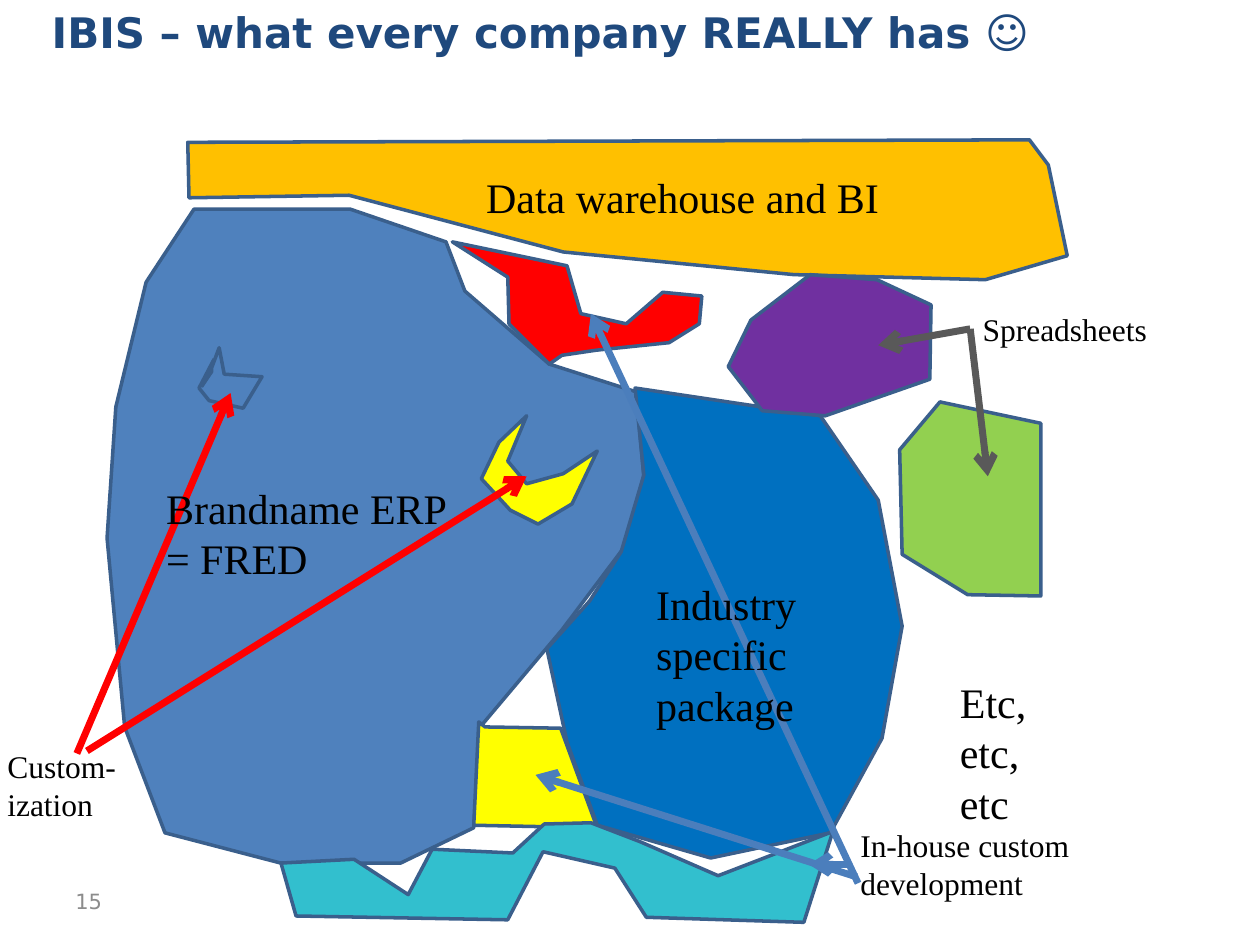
from pptx import Presentation
from pptx.dml.color import RGBColor
from pptx.enum.shapes import MSO_CONNECTOR
from pptx.enum.text import MSO_ANCHOR, PP_ALIGN
from pptx.oxml.ns import qn
from pptx.util import Inches, Pt
from lxml import etree

STRAIGHT = MSO_CONNECTOR.STRAIGHT
TOP, MIDDLE, LEFT = MSO_ANCHOR.TOP, MSO_ANCHOR.MIDDLE, PP_ALIGN.LEFT

OUTLINE = RGBColor(0x3A, 0x5F, 0x8C)
NAVY = RGBColor(0x1F, 0x49, 0x7D)
STEEL = RGBColor(0x4F, 0x81, 0xBD)
BLUE = RGBColor(0x00, 0x70, 0xC0)
YELLOW = RGBColor(0xFF, 0xFF, 0x00)
ORANGE = RGBColor(0xFF, 0xC0, 0x00)
RED = RGBColor(0xFF, 0x00, 0x00)
PURPLE = RGBColor(0x70, 0x30, 0xA0)
TEAL = RGBColor(0x32, 0xBF, 0xCE)
GREEN = RGBColor(0x92, 0xD0, 0x50)
ARROW_BLUE = RGBColor(0x4B, 0x7E, 0xBC)
DARK_GREY = RGBColor(0x59, 0x59, 0x59)
GREY = RGBColor(0x8C, 0x8C, 0x8C)
BLACK = RGBColor(0x00, 0x00, 0x00)
SANS, SERIF = "DejaVu Sans", "Times New Roman"


def write(shape, text, size, font, color, anchor=TOP, bold=False):
    frame = shape.text_frame
    frame.word_wrap = True
    frame.vertical_anchor = anchor
    para = frame.paragraphs[0]
    para.alignment = LEFT
    span = para.add_run()
    span.text = text
    span.font.size = Pt(size)
    span.font.name = font
    span.font.bold = bold
    span.font.color.rgb = color


deck = Presentation()
deck.slide_width, deck.slide_height = Inches(10), Inches(7.5)
page = deck.slides.add_slide(deck.slide_layouts[5])

title = page.shapes.title
title.left, title.top = Inches(0.31), Inches(0)
title.width, title.height = Inches(9.42), Inches(0.83)
write(title, "IBIS – what every company REALLY has ☺", 24, SANS, NAVY, bold=True)

erp = [(1.54, 1.66), (2.78, 1.66), (3.54, 1.92), (3.69, 2.31), (4.36, 2.89),
       (5.05, 3.11), (5.11, 3.78), (4.95, 4.35), (4.46, 5), (3.82, 5.76),
       (3.76, 6.57), (3.18, 6.85), (2.23, 6.85), (1.31, 6.61), (0.99, 5.77),
       (0.85, 4.27), (0.92, 3.23), (1.16, 2.24)]
industry_package = [(5.04, 3.08), (6.51, 3.3), (6.97, 3.97), (7.16, 4.97), (7, 5.86),
                    (6.59, 6.61), (5.64, 6.81), (4.74, 6.55), (4.5, 5.89),
                    (4.34, 5.15), (4.68, 4.77), (4.93, 4.38), (5.11, 3.77)]
in_house_block = [(3.8, 5.73), (3.76, 6.55), (4.74, 6.57), (4.45, 5.78), (3.85, 5.77)]
small_customization = [(1.7, 2.85), (1.58, 3.08), (1.66, 3.18), (1.93, 3.24),
                       (2.08, 2.99), (1.78, 2.97), (1.74, 2.76), (1.68, 2.92),
                       (1.68, 2.95), (1.6, 3.07)]
warehouse = [(1.49, 1.13), (1.5, 1.57), (2.77, 1.55), (4.47, 2), (6.3, 2.18),
             (7.82, 2.22), (8.47, 2.03), (8.32, 1.31), (8.17, 1.11)]
in_house_wedge = [(3.59, 1.92), (4.5, 2.11), (4.61, 2.49), (4.97, 2.57), (5.26, 2.32),
                  (5.57, 2.35), (5.55, 2.57), (5.31, 2.72), (4.73, 2.78),
                  (4.46, 2.82), (4.36, 2.89), (4.04, 2.57), (4.03, 2.2)]
upper_spreadsheet = [(5.96, 2.54), (5.78, 2.91), (6.05, 3.26), (6.55, 3.3),
                     (7.38, 3.01), (7.39, 2.42), (6.96, 2.22), (6.43, 2.18)]
in_house_base = [(2.23, 6.85), (2.35, 7.27), (4.03, 7.3), (4.31, 6.76), (4.88, 6.89),
                 (5.13, 7.28), (6.38, 7.32), (6.61, 6.6), (5.7, 6.95), (5.08, 6.68),
                 (4.69, 6.53), (4.32, 6.54), (4.07, 6.77), (3.43, 6.74),
                 (3.24, 7.1), (2.81, 6.82)]
lower_spreadsheet = [(7.46, 3.19), (7.14, 3.57), (7.16, 4.4), (7.68, 4.72),
                     (8.26, 4.73), (8.26, 3.36)]
large_customization = [(3.96, 3.51), (3.82, 3.8), (4.05, 4.05), (4.27, 4.16), (4.54, 4),
                       (4.74, 3.58), (4.47, 3.76), (4.18, 3.84), (4.03, 3.66),
                       (4.18, 3.3)]

for points, color in [
    (erp, STEEL),
    (industry_package, BLUE),
    (in_house_block, YELLOW),
    (small_customization, None),
    (warehouse, ORANGE),
    (in_house_wedge, RED),
    (upper_spreadsheet, PURPLE),
    (in_house_base, TEAL),
    (lower_spreadsheet, GREEN),
    (large_customization, YELLOW),
]:
    corners = [(Inches(x), Inches(y)) for x, y in points]
    builder = page.shapes.build_freeform(*corners[0])
    builder.add_line_segments(corners[1:], close=color is not None)
    system = builder.convert_to_shape()
    system.shadow.inherit = False
    system.line.color.rgb = OUTLINE
    system.line.width = Pt(2)
    if color is None:
        system.fill.background()
    else:
        system.fill.solid()
        system.fill.fore_color.rgb = color

for start, end, color in [
    ((0.61, 5.98), (1.83, 3.12), RED),
    ((0.69, 5.96), (4.18, 3.78), RED),
    ((6.73, 6.86), (6.42, 6.86), ARROW_BLUE),
    ((6.81, 7.01), (4.69, 2.49), ARROW_BLUE),
    ((6.8, 6.96), (4.25, 6.15), ARROW_BLUE),
    ((7.7, 2.61), (6.97, 2.74), DARK_GREY),
    ((7.7, 2.61), (7.84, 3.78), DARK_GREY),
]:
    ends = [Inches(value) for value in start + end]
    arrow = page.shapes.add_connector(STRAIGHT, *ends)
    arrow.line.color.rgb = color
    arrow.line.width = Pt(4)
    etree.SubElement(arrow.line._get_or_add_ln(), qn("a:tailEnd"), type="arrow")
    etree.SubElement(arrow._element.spPr, qn("a:effectLst"))

for text, area, size, font, color, anchor in [
    ("15", (0.5, 6.95, 2.33, 0.4), 12, SANS, GREY, MIDDLE),
    ("Etc, etc, etc", (7.52, 5.32, 0.87, 1.31), 24, SERIF, BLACK, TOP),
    ("Custom-ization", (-0.04, 5.88, 1.22, 0.71), 18, SERIF, BLACK, TOP),
    ("In-house custom development", (6.73, 6.51, 3.07, 0.71), 18, SERIF, BLACK, TOP),
    ("Industry specific package", (5.11, 4.54, 1.62, 1.31), 24, SERIF, BLACK, TOP),
    ("Brandname ERP = FRED", (1.22, 3.78, 2.54, 0.91), 24, SERIF, BLACK, TOP),
    ("Spreadsheets", (7.7, 2.41, 2.11, 0.4), 18, SERIF, BLACK, TOP),
    ("Data warehouse and BI", (3.76, 1.31, 3.38, 0.51), 24, SERIF, BLACK, TOP),
]:
    box = page.shapes.add_textbox(*[Inches(value) for value in area])
    write(box, text, size, font, color, anchor)

deck.save("out.pptx")
